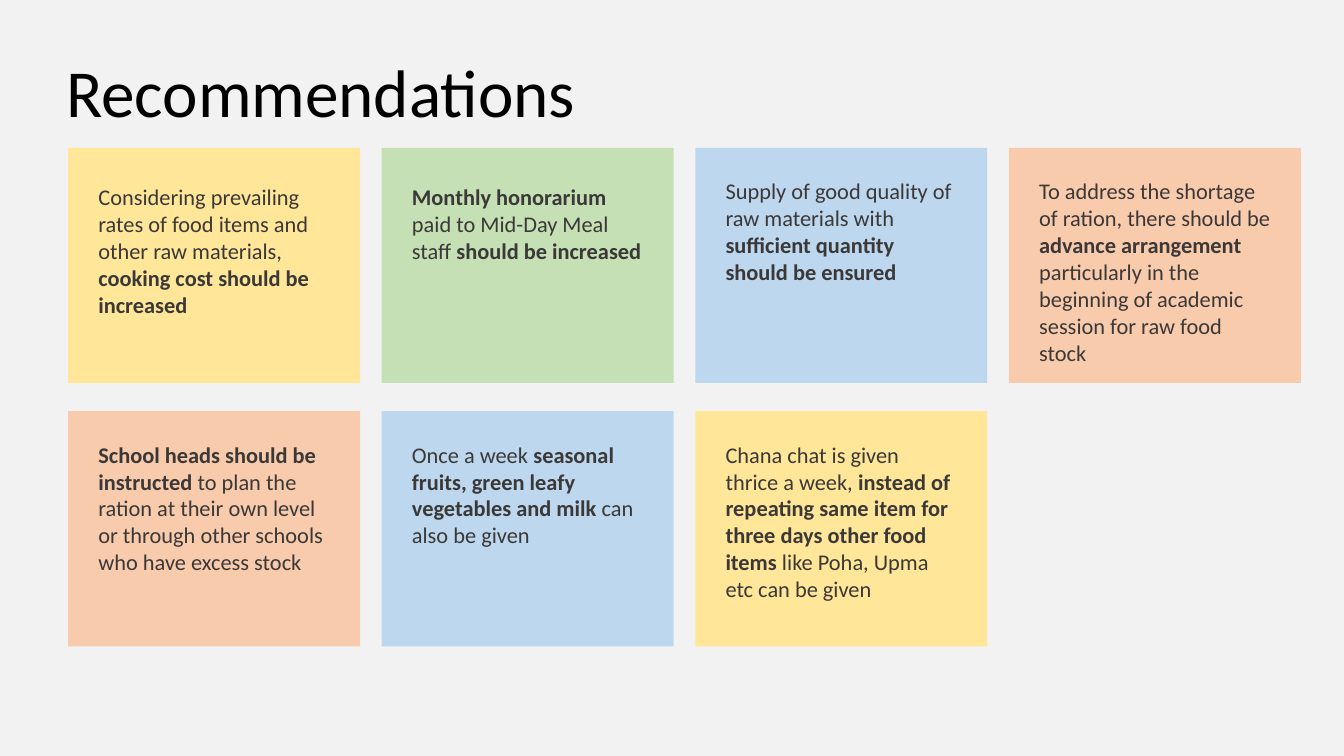
from dataclasses import dataclass

from pptx import Presentation
from pptx.dml.color import RGBColor
from pptx.enum import shapes, text
from pptx.util import Pt

YELLOW, GREEN, BLUE, PEACH = "FFE699", "C5E0B4", "BDD7EE", "F8CBAD"
COLS = 4
LEFT, TOP = 36.5, 79.2
WIDE, HIGH = 156.4, 126
STEP_X, STEP_Y = 168, 141.1
INSET_X, LINE = 9.1, 14.4


@dataclass
class Card:
    fill: str
    words: str  # parts between asterisks are bold
    lines: int
    drop: float = 12.3  # from card top to text box


CARDS = [
    Card(YELLOW, "Considering prevailing rates of food items and other raw materials, "
         "*cooking cost should be increased*", 6, 15.5),
    Card(GREEN, "*Monthly honorarium *paid to Mid-Day Meal staff *should be increased*", 4, 15.5),
    Card(BLUE, "Supply of good quality of raw materials with "
         "*sufficient quantity should be ensured*", 4),
    Card(PEACH, "To address the shortage of ration, there should be *advance arrangement *"
         "particularly in the beginning of academic session for raw food stock", 7),
    Card(PEACH, "*School heads should be instructed *to plan the ration at their own level "
         "or through other schools who have excess stock", 5),
    Card(BLUE, "Once a week *seasonal fruits, green leafy vegetables and milk *"
         "can also be given", 4),
    Card(YELLOW, "Chana chat is given thrice a week, *instead of repeating same item for "
         "three days other food items* like Poha, Upma etc can be given", 6),
]


def paint(fill, color: str) -> None:
    fill.solid()
    fill.fore_color.rgb = RGBColor.from_string(color)


def style(run, size: float, color: str, bold: bool = False) -> None:
    run.font.name = "Calibri"
    run.font.size = Pt(size)
    run.font.bold = bold
    paint(run.font.fill, color)


def add_title(slide, words: str) -> None:
    title = slide.shapes.title
    title.left, title.top, title.width, title.height = Pt(30), Pt(17.3), Pt(642), Pt(56.2)
    frame = title.text_frame
    frame.text = words
    frame.auto_size = text.MSO_AUTO_SIZE.NONE
    frame.vertical_anchor = text.MSO_ANCHOR.BOTTOM
    frame.margin_left = frame.margin_right = Pt(5.4)
    frame.margin_top = frame.margin_bottom = Pt(2.7)
    para = frame.paragraphs[0]
    para.alignment = text.PP_ALIGN.LEFT
    para.line_spacing = 0.9
    style(para.runs[0], 36, "000000")


def add_card(slide, card: Card, x: float, y: float) -> None:
    rect = slide.shapes.add_shape(
        shapes.MSO_SHAPE.RECTANGLE, Pt(x), Pt(y), Pt(WIDE), Pt(HIGH))
    rect.shadow.inherit = False
    paint(rect.fill, card.fill)
    rect.line.fill.background()

    box = slide.shapes.add_textbox(
        Pt(x + INSET_X), Pt(y + card.drop),
        Pt(WIDE - 2 * INSET_X), Pt(card.lines * LINE + 7.2))
    frame = box.text_frame
    frame.word_wrap = True
    frame.auto_size = text.MSO_AUTO_SIZE.SHAPE_TO_FIT_TEXT
    for i, part in enumerate(card.words.split("*")):
        if part:
            run = frame.paragraphs[0].add_run()
            run.text = part
            style(run, 12, "3B3838", bold=i % 2 == 1)


def main() -> None:
    deck = Presentation()
    deck.slide_width, deck.slide_height = Pt(720), Pt(405)
    slide = deck.slides.add_slide(deck.slide_layouts.get_by_name("Title Only"))
    paint(slide.background.fill, "F2F2F2")
    add_title(slide, "Recommendations")
    for i, card in enumerate(CARDS):
        row, col = divmod(i, COLS)
        add_card(slide, card, LEFT + col * STEP_X, TOP + row * STEP_Y)
    deck.save("out.pptx")


if __name__ == "__main__":
    main()
